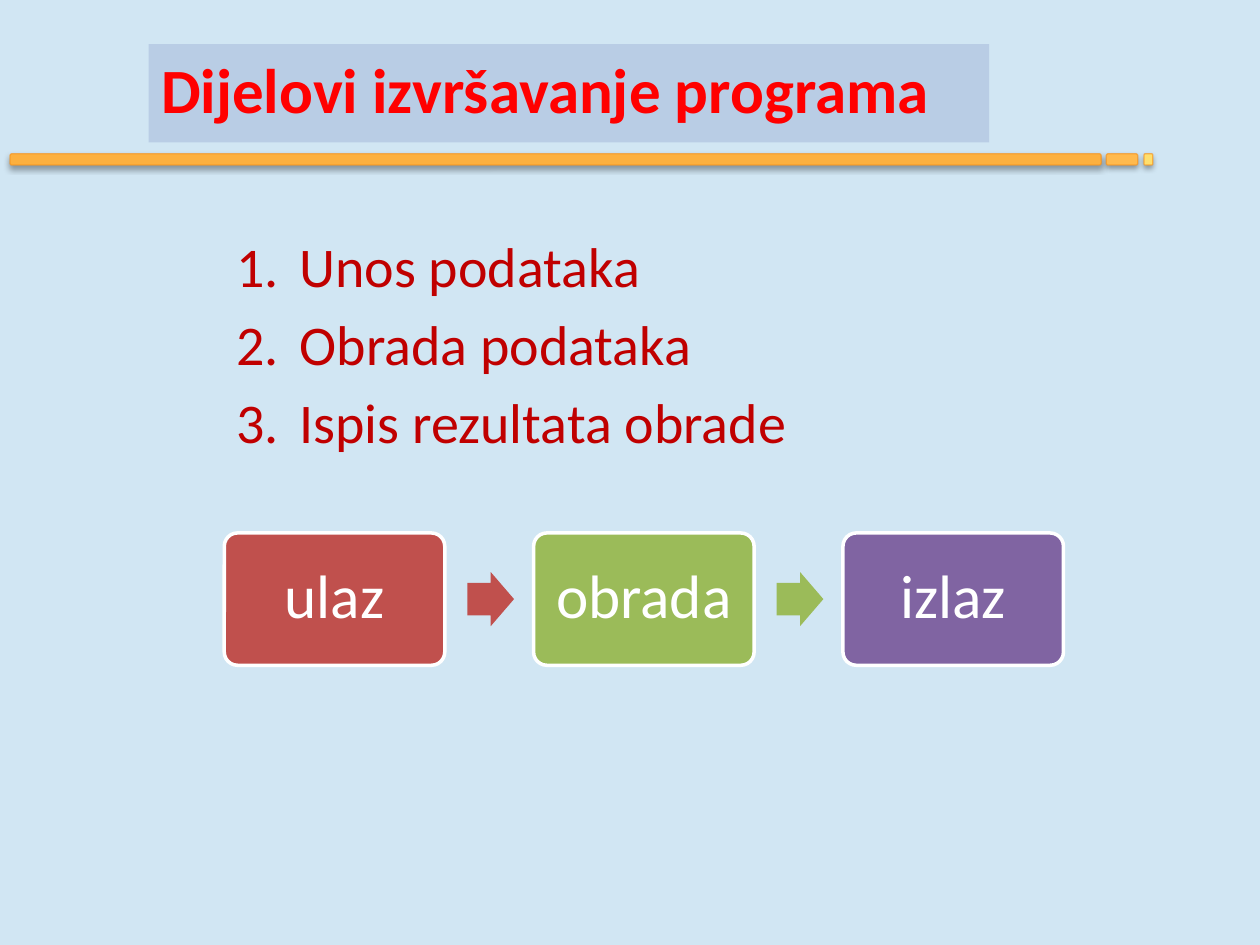
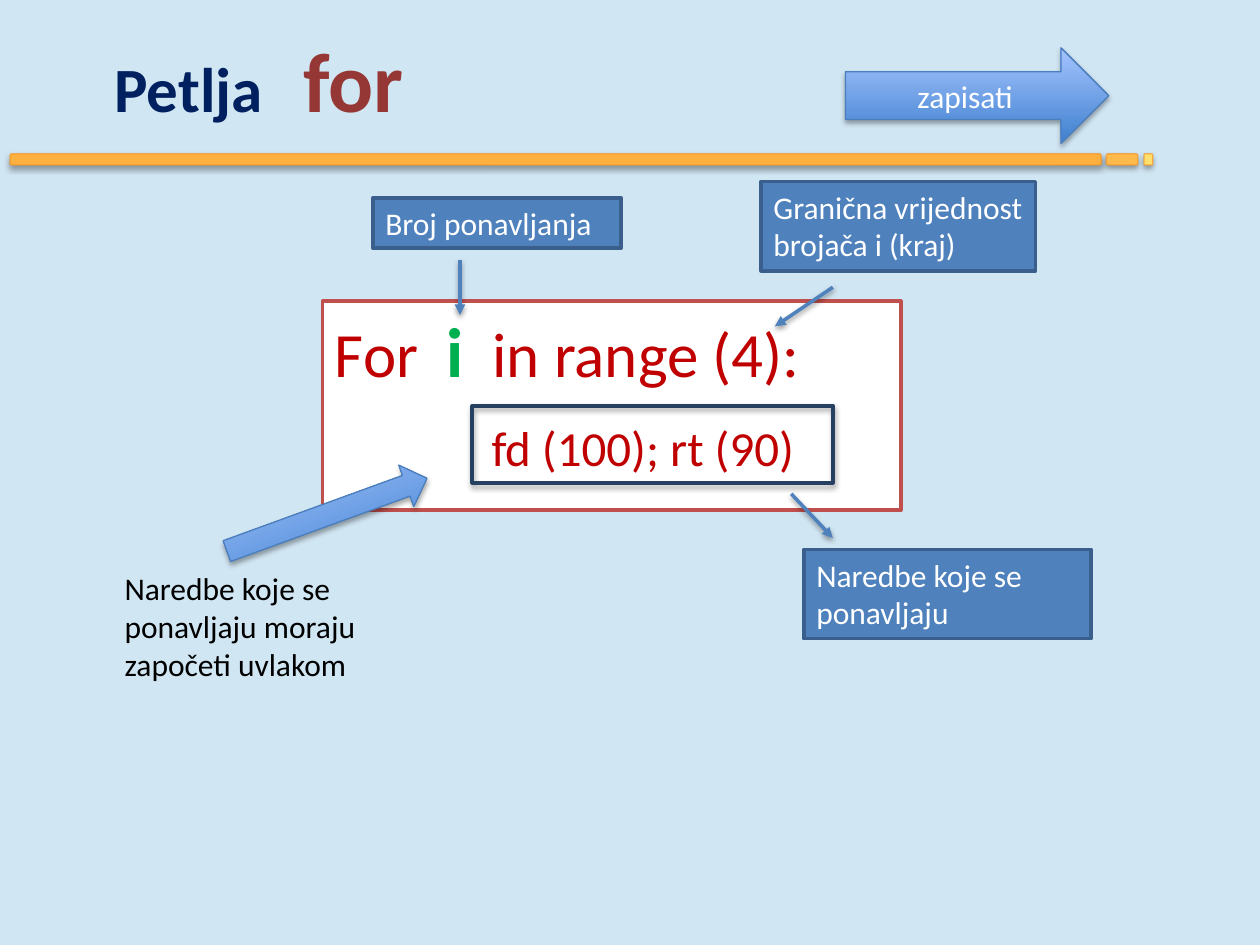
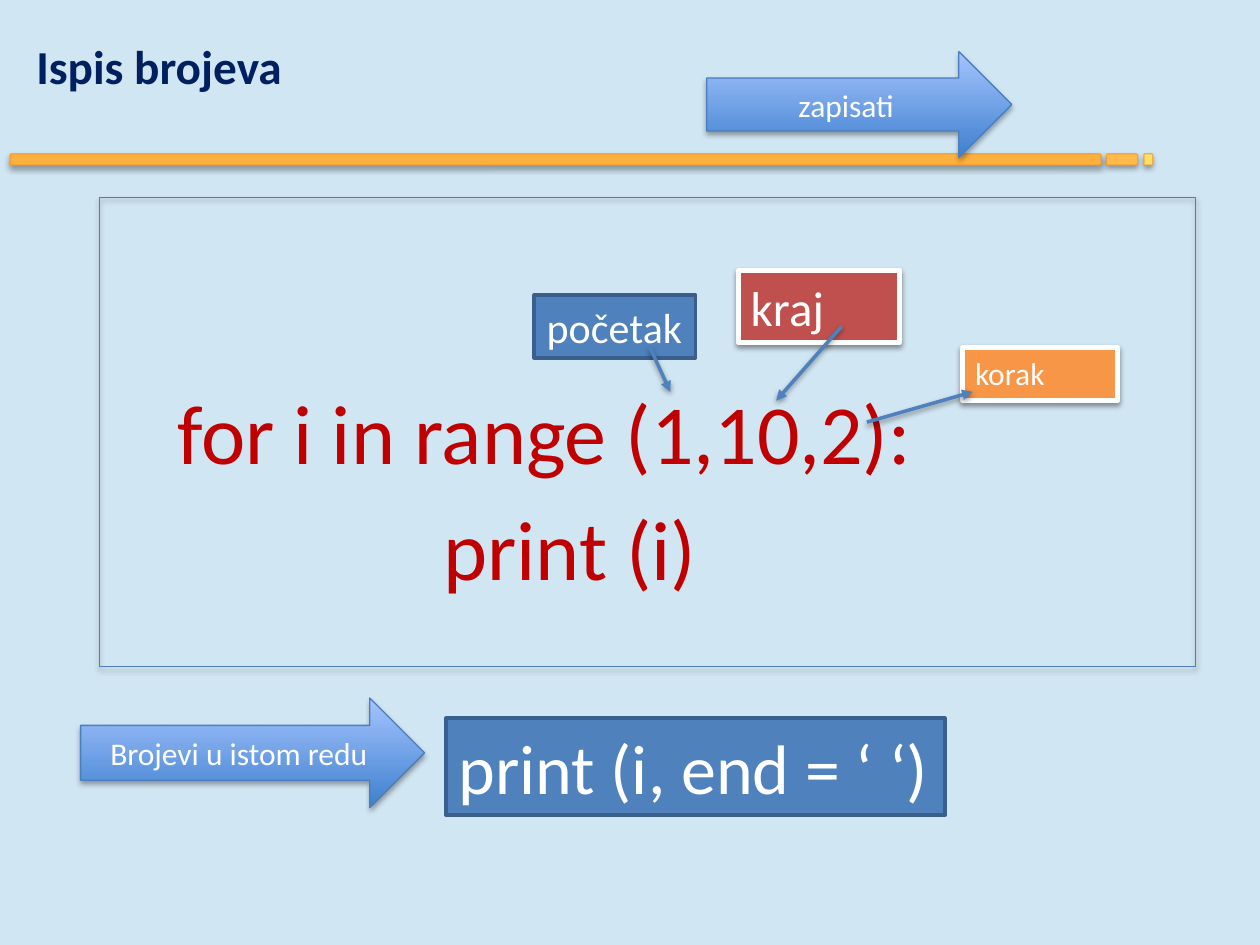
from pptx import Presentation
from pptx import util as u
from pptx.dml.color import RGBColor
from pptx.enum import shapes, text
from pptx.oxml import ns, xmlchemy

FONT = "Calibri"
COLORS = {
    "sky": "D1E6F3", "title_fill": "B9CDE5", "navy": "002060", "alert": "FF0000",
    "keyword": "953735", "code": "C00000", "counter": "00B050", "white": "FFFFFF",
    "black": "000000", "blue": "4F81BD", "blue_edge": "3A5F8C", "frame": "4B7EBC",
    "deep_blue": "254061", "grad_dark": "3F80CE", "grad_light": "A4C4FF",
    "red": "C0504D", "green": "9BBB59", "purple": "8064A2", "orange": "F79646",
    "band_edge": "F7941D", "band_1": "FCB03F", "band_2": "FFBA4E", "band_3": "FFDF6D",
}
MSO = shapes.MSO_SHAPE
BOX_SHADOW = (35, 1.8)      # opacity %, distance pt
LINE_SHADOW = (38, 1.6)

# Content
BAND = [(0.08, 8.66, "band_1"), (8.78, 0.25, "band_2"), (9.08, 0.07, "band_3")]

STEPS = ["Unos podataka", "Obrada podataka", "Ispis rezultata obrade"]
STAGES = [("ulaz", "red"), ("obrada", "green"), ("izlaz", "purple")]

FOR_CODE = [
    [("For  ", 36, "code"), ("i", 40, "counter", True), ("  in range (4):", 36, "code")],
    [("           ", 36, "code"), ("fd (100); rt (90)", 28, "code")],
]
FOR_LABELS = [
    ("Broj ponavljanja", (2.96, 1.57, 1.97, 0.4)),
    ("Granična vrijednost brojača i (kraj)", (6.04, 1.44, 2.18, 0.71)),
    ("Naredbe koje se ponavljaju", (6.38, 4.36, 2.28, 0.71)),
]
FOR_POINTERS = [(3.65, 2.06, 3.65, 2.5), (6.61, 2.28, 6.15, 2.59), (6.28, 3.92, 6.61, 4.27)]

PRINT_CODE = [
    [("for i in range (1,10,2):", 48, "code")],
    [("              print (i)", 48, "code")],
]
RANGE_LABELS = [   # text, size, place, fill, edge, edge width, shadow
    ("početak", 24, (4.24, 2.34, 1.28, 0.5), "blue", "blue_edge", 2, None),
    ("kraj", 28, (5.86, 2.15, 1.28, 0.57), "red", "white", 3, LINE_SHADOW),
    ("korak", 18, (7.64, 2.76, 1.23, 0.42), "orange", "white", 3, LINE_SHADOW),
]
RANGE_POINTERS = [(5.16, 2.76, 5.32, 3.11), (6.68, 2.59, 6.16, 3.18), (6.88, 3.35, 7.72, 3.11)]


def rgb(name):
    return RGBColor.from_string(COLORS[name])


def add_xml(parent, tag, **attrs):
    el = xmlchemy.OxmlElement(tag)
    for key, value in attrs.items():
        el.set(key, str(value))
    parent.append(el)
    return el


def add_shadow(effects, shadow):
    opacity, dist = shadow
    outer = add_xml(effects, "a:outerShdw", blurRad=u.Pt(3.1), dist=u.Pt(dist),
                    dir=90 * 60000, rotWithShape=0)
    color = add_xml(outer, "a:srgbClr", val=COLORS["black"])
    add_xml(color, "a:alpha", val=opacity * 1000)


# Text
def write(sp, paras, align=None, anchor=text.MSO_ANCHOR.TOP, wrap=True, gap=0):
    """Fill a shape with paragraphs, each a list of (text, size, colour[, bold])."""
    tf = sp.text_frame
    tf.word_wrap = wrap
    tf.vertical_anchor = anchor
    for i, runs in enumerate(paras):
        p = tf.add_paragraph() if i else tf.paragraphs[0]
        p.alignment = align or text.PP_ALIGN.LEFT
        if i and gap:
            p.space_before = u.Pt(gap)
        for words, size, color, *bold in runs:
            r = p.add_run()
            r.text = words
            r.font.name, r.font.size = FONT, u.Pt(size)
            r.font.bold = bool(bold)
            r.font.color.rgb = rgb(color)
    return tf


def add_text(s, at, paras, **kw):
    return write(s.shapes.add_textbox(*map(u.Inches, at)), paras, **kw)


# Shapes
def add_box(s, kind, at, fill=None, edge=None, width=0.75, shadow=None):
    sp = s.shapes.add_shape(kind, *map(u.Inches, at))
    if fill:
        sp.fill.solid()
        sp.fill.fore_color.rgb = rgb(fill)
    else:
        sp.fill.background()
    if edge:
        sp.line.color.rgb = rgb(edge)
        sp.line.width = u.Pt(width)
    else:
        sp.line.fill.background()
    sp.shadow.inherit = False
    if shadow:
        add_shadow(sp._element.spPr.find(ns.qn("a:effectLst")), shadow)
    return sp


def add_label(s, words, at, size=18, fill="blue", edge="blue_edge", width=2,
              shadow=None, wrap=True):
    sp = add_box(s, MSO.RECTANGLE, at, fill, edge, width, shadow)
    write(sp, [[(words, size, "white")]], wrap=wrap)


def add_block_arrow(s, at, words=None, rotation=0):
    sp = add_box(s, MSO.RIGHT_ARROW, at, "blue", "frame", shadow=BOX_SHADOW)
    sp.fill.gradient()
    sp.fill.gradient_angle = 90
    for stop, color in zip(sp.fill.gradient_stops, ("grad_dark", "grad_light")):
        stop.color.rgb = rgb(color)
    sp.rotation = rotation
    if words:
        write(sp, [[(words, 18, "white")]], text.PP_ALIGN.CENTER, text.MSO_ANCHOR.MIDDLE)


def add_pointer(s, ends):
    c = s.shapes.add_connector(shapes.MSO_CONNECTOR.STRAIGHT, *map(u.Inches, ends))
    c.line.color.rgb = rgb("blue")
    c.line.width = u.Pt(2)
    add_xml(c.line._get_or_add_ln(), "a:tailEnd", type="triangle")
    add_shadow(add_xml(c._element.spPr, "a:effectLst"), LINE_SHADOW)


def new_slide(prs):
    """Blank slide with the shared background and orange band."""
    s = prs.slides.add_slide(prs.slide_layouts[6])
    s.background.fill.solid()
    s.background.fill.fore_color.rgb = rgb("sky")
    for left, width, fill in BAND:
        sp = add_box(s, MSO.ROUNDED_RECTANGLE, (left, 1.22, width, 0.09), fill,
                     "band_edge", shadow=BOX_SHADOW)
        edge = sp.line._get_or_add_ln().find(".//" + ns.qn("a:srgbClr"))
        add_xml(edge, "a:alpha", val=65000)
    return s


# Slides
def program_parts(prs):
    s = new_slide(prs)
    title = add_box(s, MSO.RECTANGLE, (1.18, 0.35, 6.67, 0.78), "title_fill")
    write(title, [[("Dijelovi izvršavanje programa", 36, "alert", True)]])

    # Numbered steps
    tf = add_text(s, (1.78, 1.79, 7.33, 2.1), [[(step, 32, "code")] for step in STEPS], gap=6)
    for p in tf.paragraphs:
        pPr = p._p.get_or_add_pPr()
        pPr.set("marL", str(u.Inches(0.5)))
        pPr.set("indent", str(u.Inches(-0.5)))
        add_xml(pPr, "a:buFont", typeface="+mj-lt")
        add_xml(pPr, "a:buAutoNum", type="arabicPeriod")

    # Input, processing, output
    for i, (words, color) in enumerate(STAGES):
        left = 1.78 + i * 2.455
        sp = add_box(s, MSO.ROUNDED_RECTANGLE, (left, 4.23, 1.75, 1.05), color, "white", 2)
        sp.adjustments[0] = 0.1
        tf = write(sp, [[(words, 35, "white")]], text.PP_ALIGN.CENTER, text.MSO_ANCHOR.MIDDLE)
        tf.paragraphs[0].line_spacing = 0.9
        if i < len(STAGES) - 1:
            arrow = add_box(s, MSO.RIGHT_ARROW, (left + 1.93, 4.54, 0.37, 0.43), color)
            arrow.adjustments[0] = 0.6


def for_loop(prs):
    s = new_slide(prs)
    tf = add_text(s, (0.81, 0.18, 5.5, 1.01),
                  [[("Petlja\t", 36, "navy", True), ("for", 48, "keyword", True)]])
    tabs = add_xml(tf.paragraphs[0]._p.get_or_add_pPr(), "a:tabLst")
    add_xml(tabs, "a:tab", pos=u.Inches(1.5), algn="l")

    code = add_box(s, MSO.RECTANGLE, (2.56, 2.39, 4.59, 1.66), "white", "red", 2)
    write(code, FOR_CODE, gap=7)
    add_box(s, MSO.FLOWCHART_PROCESS, (3.75, 3.22, 2.86, 0.61), None, "deep_blue", 2.25,
            BOX_SHADOW)
    for words, at in FOR_LABELS:
        add_label(s, words, at)
    for ends in FOR_POINTERS:
        add_pointer(s, ends)

    add_text(s, (0.89, 4.47, 2.54, 1.01),
             [[("Naredbe koje se ponavljaju moraju započeti uvlakom", 18, "black")]])
    add_block_arrow(s, (1.75, 3.91, 1.69, 0.35), rotation=340)
    add_block_arrow(s, (6.71, 0.38, 2.09, 0.76), "zapisati")


def number_printing(prs):
    s = new_slide(prs)
    add_text(s, (0.19, 0.25, 5, 0.8), [[("Ispis brojeva", 27, "navy", True)]])
    add_text(s, (1.31, 2.97, 7.22, 2.04), PRINT_CODE, gap=9)
    for words, size, at, *style in RANGE_LABELS:
        add_label(s, words, at, size, *style)
    for ends in RANGE_POINTERS:
        add_pointer(s, ends)

    add_label(s, "print (i, end = ‘ ‘)", (3.54, 5.7, 3.96, 0.77), 40, wrap=False)
    add_block_arrow(s, (0.64, 5.54, 2.73, 0.87), "Brojevi u istom redu")
    add_box(s, MSO.RECTANGLE, (0.79, 1.57, 8.7, 3.72), None, "frame", shadow=BOX_SHADOW)
    add_block_arrow(s, (5.61, 0.41, 2.42, 0.84), "zapisati")


def main():
    prs = Presentation()
    prs.slide_width, prs.slide_height = u.Inches(10), u.Inches(7.5)
    for build in (program_parts, for_loop, number_printing):
        build(prs)
    prs.save("out.pptx")


if __name__ == "__main__":
    main()
